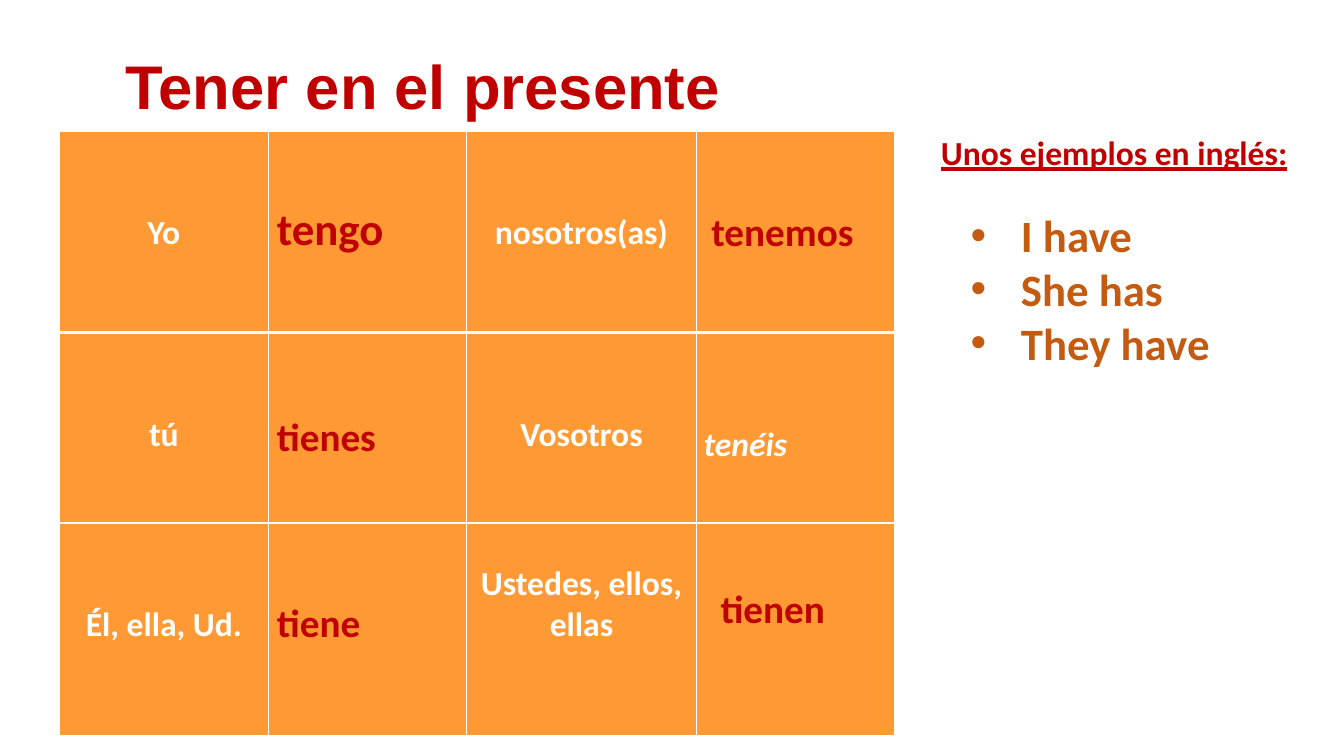
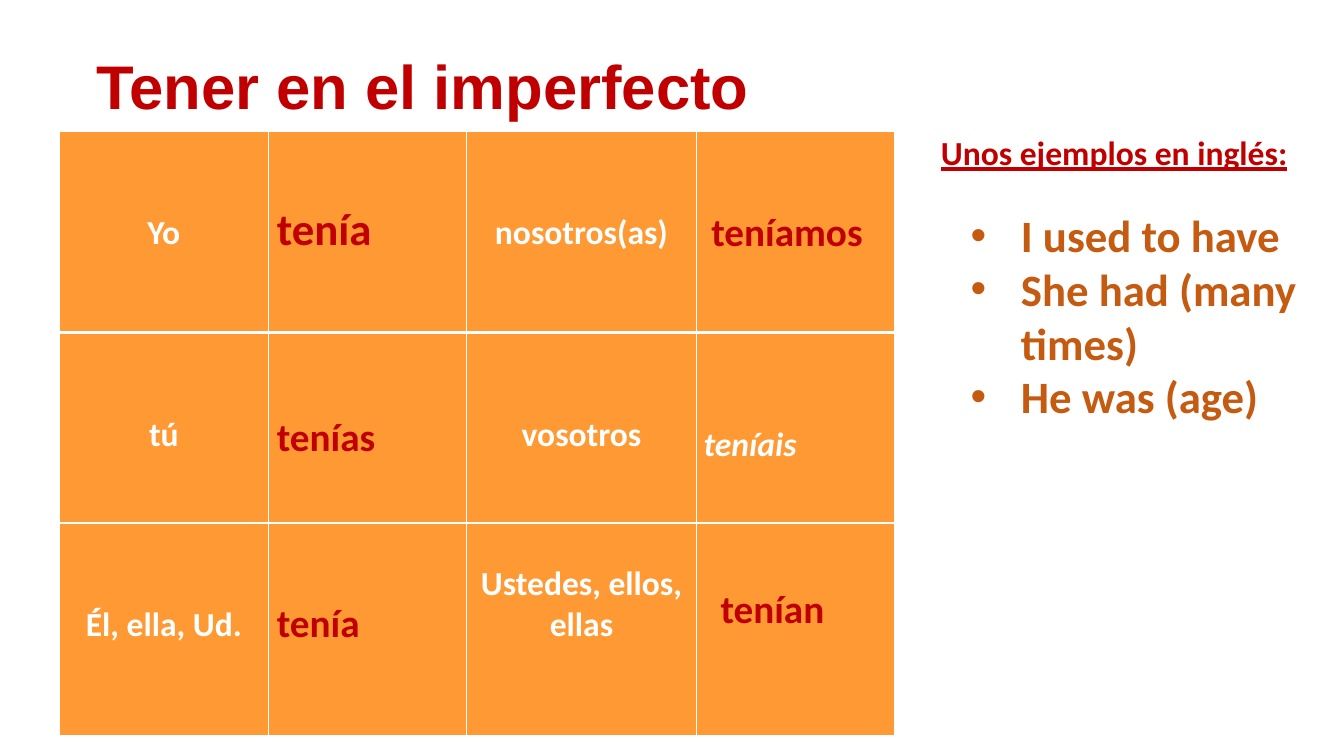
"""Build two slides on the Spanish verb tener: present and imperfect tense."""
from lxml import etree
from pptx import Presentation
from pptx.dml.color import RGBColor
from pptx.enum import shapes, text
from pptx.oxml import ns
from pptx.util import Cm, Pt

COLORS = {"red": "C00000", "orange": "FF9933", "rust": "C55A11", "white": "FFFFFF"}
COLUMN_WIDTHS = [5.26, 5, 5.79, 5]
ROW_HEIGHTS = [5.08, 4.8, 5.36]
CENTER = text.PP_ALIGN.CENTER
LINE_24 = 29.3

VERB_BOXES = [
    (6.73, 4.93, 4.93, 1.63, 32),
    (6.73, 10.26, 5.51, 1.45, 28),
    (6.73, 14.94, 5.51, 1.45, 28),
    (17.91, 14.61, 5.51, 1.45, 28),
    (17.68, 5.11, 5.51, 1.45, 28),
]
TENSES = [
    {
        "title": "Tener en el presente",
        "vosotros": ("Vosotros", "tenéis"),
        "verbs": ["tengo", "tienes", "tiene", "tienen", "tenemos"],
        "examples": ["I have", "She has", "They have"],
        "examples_height": 4.37,
    },
    {
        "title": "Tener en el imperfecto",
        "vosotros": ("vosotros", "teníais"),
        "verbs": ["tenía", "tenías", "tenía", "tenían", "teníamos"],
        "examples": ["I used to have", "She had (many times)", "He was (age)"],
        "examples_height": 5.74,
    },
]


def add_run(paragraph, wording, size, color, font="Calibri"):
    run = paragraph.add_run()
    run.text = wording
    run.font.name = font
    run.font.size = Pt(size)
    run.font.bold = True
    run.font.color.rgb = RGBColor.from_string(COLORS[color])
    return run


def add_text_box(slide, left, top, width, height):
    box = slide.shapes.add_textbox(Cm(left), Cm(top), Cm(width), Cm(height))
    box.text_frame.word_wrap = True
    return box.text_frame


presentation = Presentation()
presentation.slide_width = Cm(33.87)
presentation.slide_height = Cm(19.05)

for tense in TENSES:
    slide = presentation.slides.add_slide(presentation.slide_layouts[6])

    title_frame = add_text_box(slide, -3.94, 0.43, 29.21, 4.09 - 0.43)
    title_frame.vertical_anchor = text.MSO_ANCHOR.MIDDLE
    title = title_frame.paragraphs[0]
    title.alignment = CENTER
    title.line_spacing = 0.9
    add_run(title, tense["title"], 44, "red", "Arial")

    table = slide.shapes.add_table(
        3, 4, Cm(1.5), Cm(3.3), Cm(sum(COLUMN_WIDTHS)), Cm(sum(ROW_HEIGHTS))
    ).table
    for column, width in zip(table.columns, COLUMN_WIDTHS):
        column.width = Cm(width)
    for row, height in zip(table.rows, ROW_HEIGHTS):
        row.height = Cm(height)

    vosotros, vosotros_form = tense["vosotros"]
    pronouns = [
        ["Yo", "", "nosotros(as)", ""],
        ["tú", "", vosotros, vosotros_form],
        ["Él, ella, Ud.", "", "Ustedes, ellos, ellas", ""],
    ]
    for row_index, row_words in enumerate(pronouns):
        for column_index, wording in enumerate(row_words):
            cell = table.cell(row_index, column_index)
            borders = {
                "lnL": 1,
                "lnR": 1,
                "lnT": 3 if row_index == 1 else 1,
                "lnB": 3 if row_index == 0 else 1,
            }
            properties = cell._tc.get_or_add_tcPr()
            for side, points in borders.items():
                line = etree.SubElement(properties, ns.qn(f"a:{side}"), w=str(Pt(points)))
                fill = etree.SubElement(line, ns.qn("a:solidFill"))
                etree.SubElement(fill, ns.qn("a:srgbClr"), val=COLORS["white"])
            cell.fill.solid()
            cell.fill.fore_color.rgb = RGBColor.from_string(COLORS["orange"])
            if not wording:
                continue
            cell.margin_left = cell.margin_right = Cm(0.18)
            cell.margin_top = Pt(2 * LINE_24)
            cell.margin_bottom = 0
            paragraph = cell.text_frame.paragraphs[0]
            run = add_run(paragraph, wording, 24, "white")
            if wording == vosotros_form:
                run.font.italic = True
                cell.margin_top = Pt(66)
            else:
                paragraph.alignment = CENTER
            if wording.startswith("Ustedes"):
                cell.margin_top = Pt(LINE_24)

    for verb, (left, top, width, height, size) in zip(tense["verbs"], VERB_BOXES):
        verb_frame = add_text_box(slide, left, top, width, height)
        add_run(verb_frame.paragraphs[0], verb, size, "red")

    panel = slide.shapes.add_shape(
        shapes.MSO_SHAPE.RECTANGLE, Cm(23.19), Cm(3.2), Cm(9.78), Cm(7.44)
    )
    panel.shadow.inherit = False
    panel.fill.background()
    panel.line.color.rgb = RGBColor.from_string(COLORS["white"])
    panel.line.width = Pt(0.75)
    panel.text_frame.word_wrap = True
    panel.text_frame.vertical_anchor = text.MSO_ANCHOR.TOP
    heading = panel.text_frame.paragraphs[0]
    heading.alignment = CENTER
    add_run(heading, "Unos ejemplos en inglés:", 24, "red").font.underline = True

    examples_frame = add_text_box(slide, 24.21, 5.11, 8.76, tense["examples_height"])
    for index, example in enumerate(tense["examples"]):
        paragraph = examples_frame.add_paragraph() if index else examples_frame.paragraphs[0]
        properties = paragraph._p.get_or_add_pPr()
        properties.set("marL", str(Cm(1.27)))
        properties.set("indent", str(-Cm(1.27)))
        etree.SubElement(properties, ns.qn("a:buFont"), typeface="Arial")
        etree.SubElement(properties, ns.qn("a:buChar"), char="•")
        add_run(paragraph, example, 32, "rust")

presentation.save("out.pptx")
